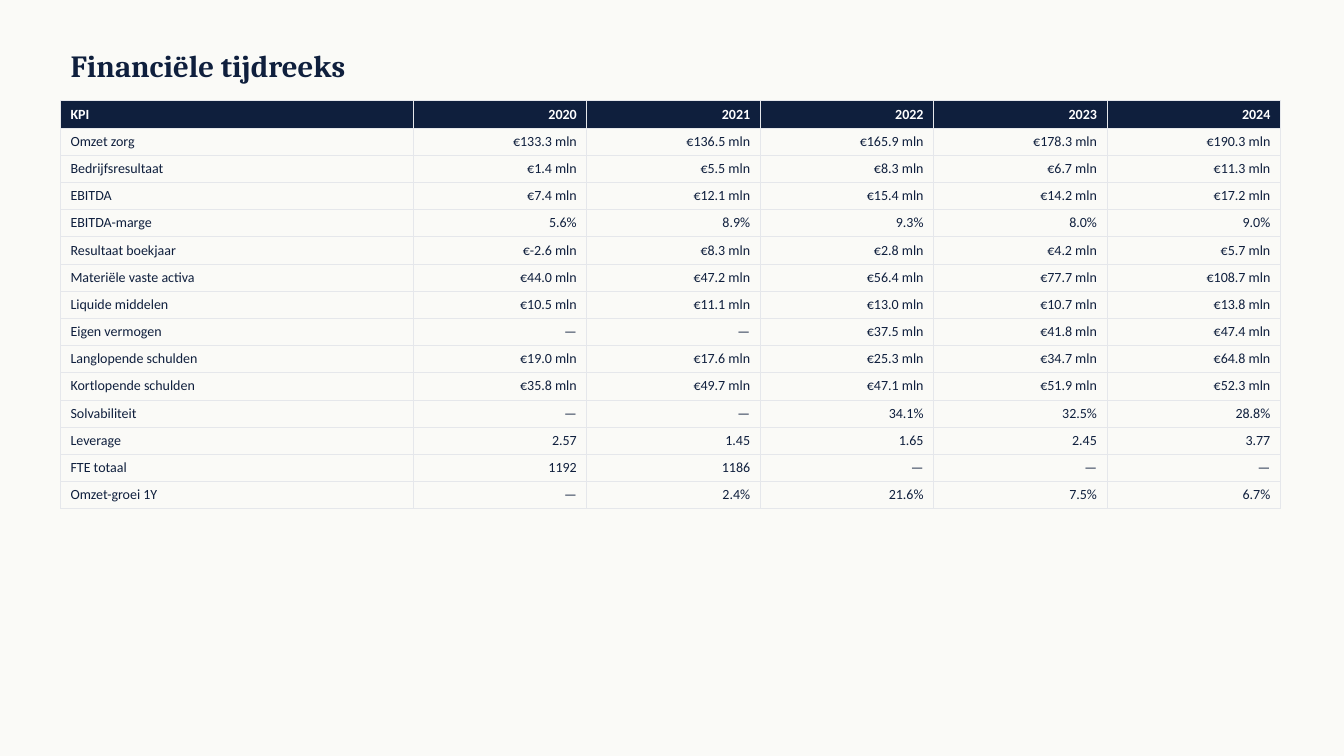
from lxml import etree
from pptx import Presentation
from pptx.dml.color import RGBColor
from pptx.enum.text import MSO_ANCHOR, MSO_AUTO_SIZE, PP_ALIGN
from pptx.oxml.ns import qn
from pptx.util import Emu, Pt

LEFT, RIGHT = PP_ALIGN.LEFT, PP_ALIGN.RIGHT
MIDDLE = MSO_ANCHOR.MIDDLE
NO_AUTOFIT = MSO_AUTO_SIZE.NONE

NAVY = RGBColor(0x0F, 0x1F, 0x3D)
WHITE = RGBColor(0xFF, 0xFF, 0xFF)
IVORY = RGBColor(0xFA, 0xFA, 0xF7)
GRID_GREY = RGBColor(0xE5, 0xE7, 0xEB)

EMU_PER_PX = 9144  # 100 px to the inch
KPI_WIDTH, YEAR_WIDTH, ROW_HEIGHT = 350, 172, 27
GRID_LINE = Pt(0.5)

KPI_ROWS = [
    ("KPI", "2020", "2021", "2022", "2023", "2024"),
    ("Omzet zorg", "€133.3 mln", "€136.5 mln", "€165.9 mln", "€178.3 mln", "€190.3 mln"),
    ("Bedrijfsresultaat", "€1.4 mln", "€5.5 mln", "€8.3 mln", "€6.7 mln", "€11.3 mln"),
    ("EBITDA", "€7.4 mln", "€12.1 mln", "€15.4 mln", "€14.2 mln", "€17.2 mln"),
    ("EBITDA-marge", "5.6%", "8.9%", "9.3%", "8.0%", "9.0%"),
    ("Resultaat boekjaar", "€-2.6 mln", "€8.3 mln", "€2.8 mln", "€4.2 mln", "€5.7 mln"),
    ("Materiële vaste activa", "€44.0 mln", "€47.2 mln", "€56.4 mln", "€77.7 mln", "€108.7 mln"),
    ("Liquide middelen", "€10.5 mln", "€11.1 mln", "€13.0 mln", "€10.7 mln", "€13.8 mln"),
    ("Eigen vermogen", "—", "—", "€37.5 mln", "€41.8 mln", "€47.4 mln"),
    ("Langlopende schulden", "€19.0 mln", "€17.6 mln", "€25.3 mln", "€34.7 mln", "€64.8 mln"),
    ("Kortlopende schulden", "€35.8 mln", "€49.7 mln", "€47.1 mln", "€51.9 mln", "€52.3 mln"),
    ("Solvabiliteit", "—", "—", "34.1%", "32.5%", "28.8%"),
    ("Leverage", "2.57", "1.45", "1.65", "2.45", "3.77"),
    ("FTE totaal", "1192", "1186", "—", "—", "—"),
    ("Omzet-groei 1Y", "—", "2.4%", "21.6%", "7.5%", "6.7%"),
]


def px(length):
    return Emu(length * EMU_PER_PX)


def write(text_frame, text, font_name, size, color, bold, align):
    text_frame.text = text
    paragraph = text_frame.paragraphs[0]
    paragraph.alignment = align
    font = paragraph.runs[0].font
    font.name, font.size, font.bold = font_name, Pt(size), bold
    font.color.rgb = color


def set_title(slide, text, left, top, width, height):
    title = slide.shapes.title
    title.left, title.top = px(left), px(top)
    title.width, title.height = px(width), px(height)
    frame = title.text_frame
    frame.word_wrap = True
    frame.auto_size = NO_AUTOFIT
    frame.vertical_anchor = MIDDLE
    write(frame, text, "Cambria", 22, NAVY, True, LEFT)


def add_borders(cell):
    # Border lines must come before the fill in the cell properties
    properties = cell._tc.get_or_add_tcPr()
    for position, side in enumerate(("a:lnL", "a:lnR", "a:lnT", "a:lnB")):
        line = etree.Element(qn(side), w=str(GRID_LINE))
        fill = etree.SubElement(line, qn("a:solidFill"))
        etree.SubElement(fill, qn("a:srgbClr"), val=str(GRID_GREY))
        properties.insert(position, line)


def format_cell(cell, text, is_header, align):
    if is_header:
        cell.fill.solid()
        cell.fill.fore_color.rgb = NAVY
    else:
        cell.fill.background()
    add_borders(cell)
    write(cell.text_frame, text, "Calibri", 10, WHITE if is_header else NAVY, is_header, align)


def add_kpi_table(slide, rows, left, top):
    year_count = len(rows[0]) - 1
    widths = [KPI_WIDTH] + [YEAR_WIDTH] * year_count
    table = slide.shapes.add_table(
        len(rows), len(widths), px(left), px(top),
        px(sum(widths)), px(ROW_HEIGHT * len(rows))).table
    table.horz_banding = False
    for column, width in zip(table.columns, widths):
        column.width = px(width)
    for row_index, values in enumerate(rows):
        for column_index, value in enumerate(values):
            format_cell(table.cell(row_index, column_index), value,
                        row_index == 0, RIGHT if column_index else LEFT)


def main():
    presentation = Presentation()
    presentation.slide_width, presentation.slide_height = px(1333), px(750)

    # Title Only layout on an ivory background
    slide = presentation.slides.add_slide(presentation.slide_layouts[5])
    slide.background.fill.solid()
    slide.background.fill.fore_color.rgb = IVORY

    set_title(slide, "Financiële tijdreeks", 60, 40, 1200, 50)
    add_kpi_table(slide, KPI_ROWS, 60, 100)

    presentation.save("out.pptx")


if __name__ == "__main__":
    main()
